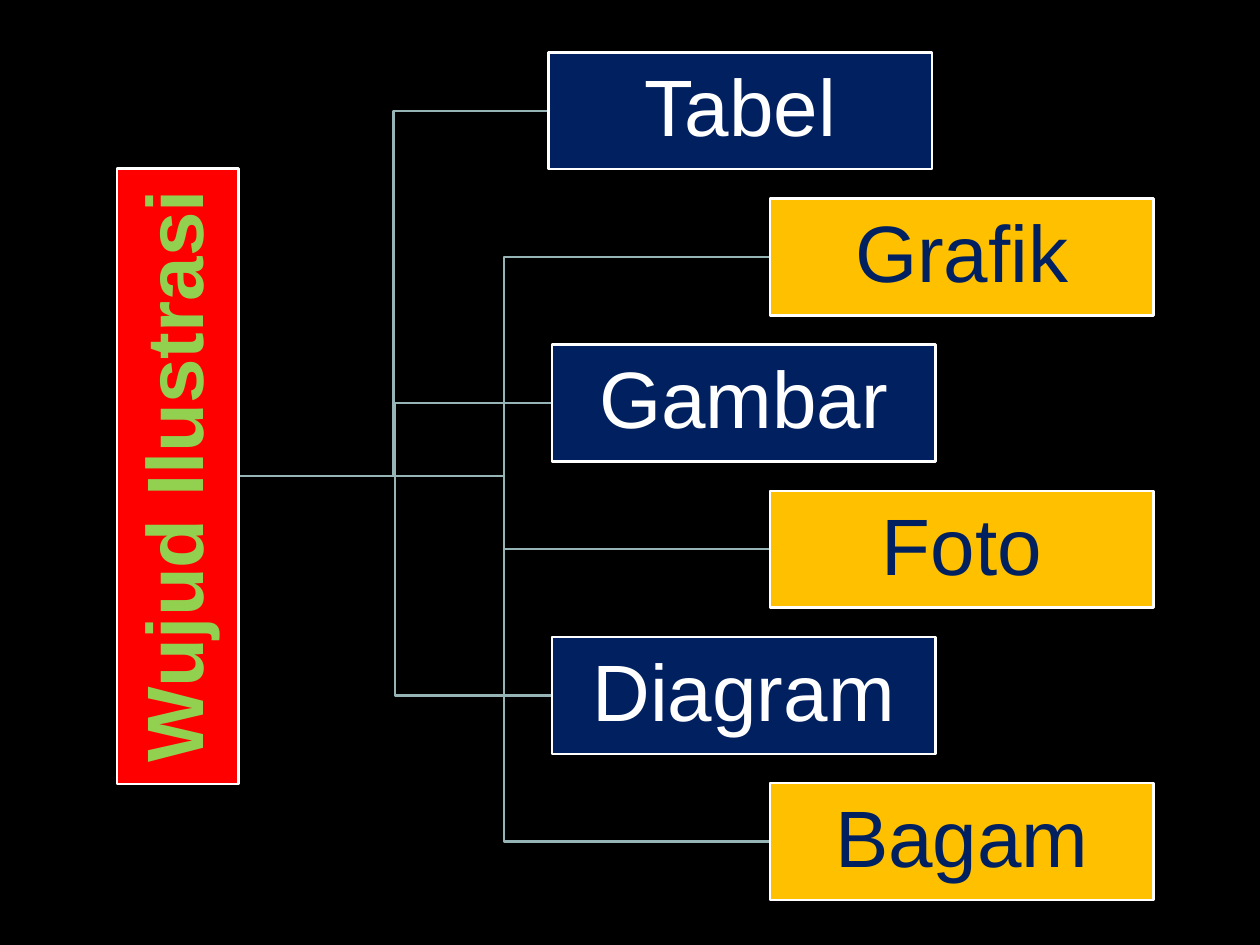
from pptx import Presentation
from pptx.dml.color import RGBColor
from pptx.enum.shapes import MSO_SHAPE
from pptx.enum.text import MSO_ANCHOR, PP_ALIGN
from pptx.util import Pt

WIDTH, HEIGHT = 1023.84, 768.24
NAVY, GOLD, WHITE = "002060", "FFC000", "FFFFFF"
ROOT_RIGHT, MIDDLE = 193.8, 387
ROOT_LENGTH, ROOT_THICKNESS = 500.4, 98.8
BOX_WIDTH, BOX_HEIGHT = 311.8, 95
FIRST_TOP, STEP = 42.6, 118.8

# Label, left edge, fill colour, text colour
BRANCHES = [
    ("Tabel", 445.7, NAVY, WHITE),
    ("Grafik", 625.7, GOLD, NAVY),
    ("Gambar", 448.4, NAVY, WHITE),
    ("Foto", 625.7, GOLD, NAVY),
    ("Diagram", 448.4, NAVY, WHITE),
    ("Bagam", 625.7, GOLD, NAVY),
]


def color(value):
    return RGBColor.from_string(value)


def set_format(target, values):
    for name, value in values.items():
        setattr(target, name, value)


def set_line(shape, value):
    shape.line.color.rgb = color(value)
    shape.line.width = Pt(2)


def add_rectangle(page, left, top, width, height, fill):
    box = page.shapes.add_shape(
        MSO_SHAPE.RECTANGLE, Pt(left), Pt(top), Pt(width), Pt(height))
    box.shadow.inherit = False
    box.fill.solid()
    box.fill.fore_color.rgb = color(fill)
    box.line.fill.background()
    return box


def add_label_box(page, text, left, top, width, height, fill, text_color, bold=False):
    box = add_rectangle(page, left, top, width, height, fill)
    set_line(box, WHITE)
    frame = box.text_frame
    margins = {f"margin_{side}": Pt(3.6) for side in ("left", "top", "right", "bottom")}
    set_format(frame, {"word_wrap": True, "vertical_anchor": MSO_ANCHOR.MIDDLE, **margins})
    para = frame.paragraphs[0]
    set_format(para, {"alignment": PP_ALIGN.CENTER, "line_spacing": 0.9})
    span = para.add_run()
    span.text = text
    set_format(span.font, {"name": "Arial", "size": Pt(65), "bold": bold})
    span.font.color.rgb = color(text_color)
    return box


def add_branch_line(page, end_x, end_y):
    """Draw an elbow from the root that turns halfway to the branch."""
    turn = (ROOT_RIGHT + end_x) / 2
    builder = page.shapes.build_freeform(Pt(ROOT_RIGHT), Pt(MIDDLE))
    corners = [(turn, MIDDLE), (turn, end_y), (end_x, end_y)]
    builder.add_line_segments([(Pt(x), Pt(y)) for x, y in corners], close=False)
    elbow = builder.convert_to_shape()
    elbow.shadow.inherit = False
    elbow.fill.background()
    set_line(elbow, "96B3B6")


def add_root(page):
    center_x = ROOT_RIGHT - ROOT_THICKNESS / 2
    root = add_label_box(
        page, "Wujud Ilustrasi", center_x - ROOT_LENGTH / 2, MIDDLE - ROOT_THICKNESS / 2,
        ROOT_LENGTH, ROOT_THICKNESS, "FF0000", "92D050", bold=True)
    root.rotation = 270


def main():
    deck = Presentation()
    set_format(deck, {"slide_width": Pt(WIDTH), "slide_height": Pt(HEIGHT)})
    page = deck.slides.add_slide(deck.slide_layouts[6])
    add_rectangle(page, 0, 0, WIDTH, HEIGHT, "000000")

    tops = [FIRST_TOP + STEP * row for row in range(len(BRANCHES))]
    for (_, left, _, _), top in zip(BRANCHES, tops):
        add_branch_line(page, left, top + BOX_HEIGHT / 2)
    add_root(page)
    for (text, left, fill, text_color), top in zip(BRANCHES, tops):
        add_label_box(page, text, left, top, BOX_WIDTH, BOX_HEIGHT, fill, text_color)

    deck.save("out.pptx")


if __name__ == "__main__":
    main()
